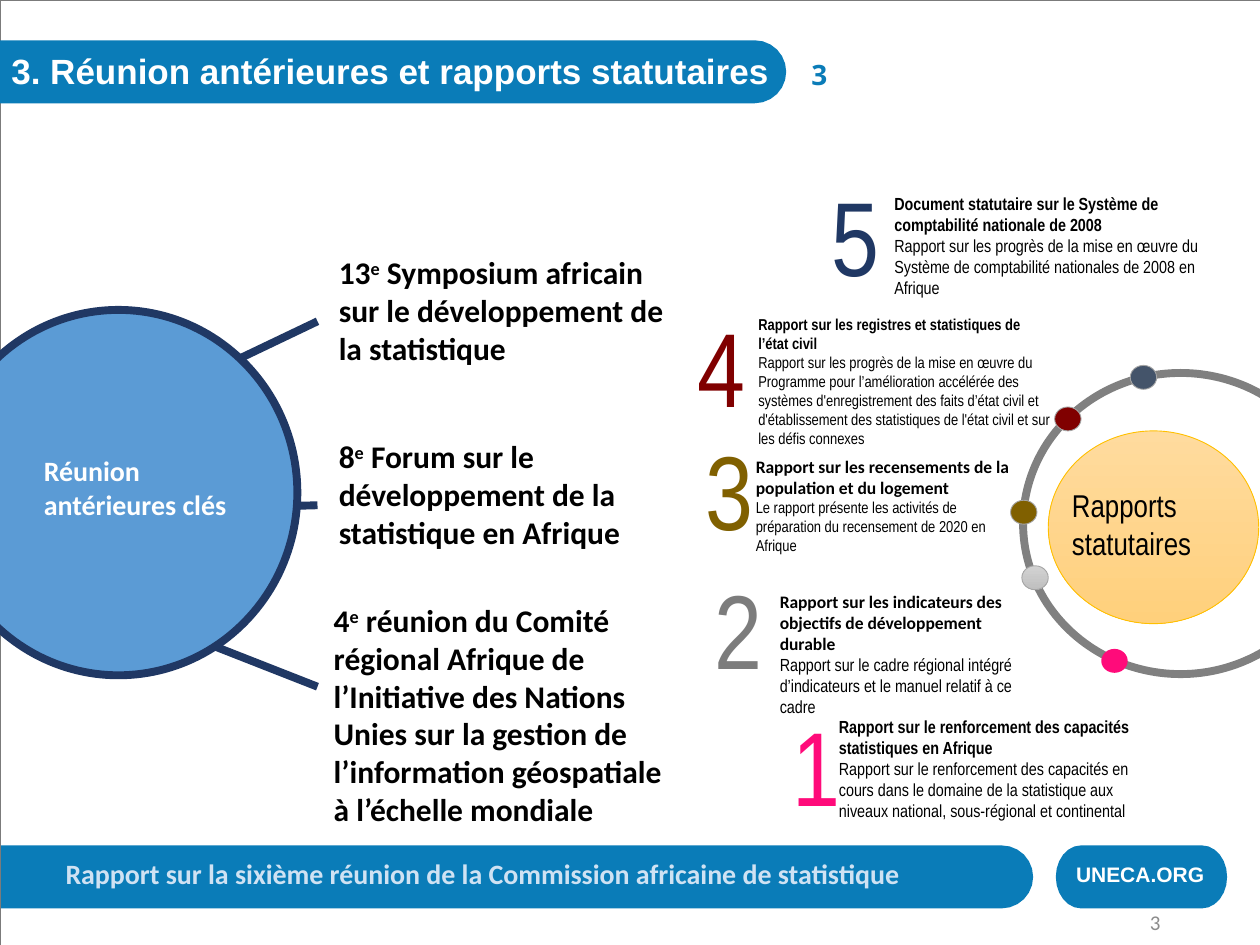
from math import cos, sin, radians
from lxml.etree import SubElement
from pptx import Presentation
from pptx.dml.color import RGBColor as Rgb
from pptx.enum.shapes import MSO_CONNECTOR as Link, MSO_SHAPE as Kind
from pptx.enum.text import MSO_ANCHOR as Anchor, MSO_AUTO_SIZE as Fit, PP_ALIGN as Align
from pptx.oxml.ns import qn
from pptx.util import Inches, Pt

BLUE, NAVY, WHITE, GREY = "0A7CB8", "203864", "FFFFFF", "A5A5A5"
NARROW = "Arial Narrow"

EVENTS = [
    (2.59, 1.96, 1.01, "13", " Symposium africain sur le développement de la statistique"),
    (2.59, 3.42, 1.01, "8", " Forum sur le développement de la statistique en Afrique"),
    (2.55, 4.72, 1.92, "4", " réunion du Comité régional Afrique de l’Initiative des Nations Unies "
     "sur la gestion de l’information géospatiale à l’échelle mondiale"),
]
SPOKES = [(1.39, 3.09, 2.52, 2.55), (1.5, 5.05, 2.52, 5.45), (1.45, 4.04, 2.52, 4.01)]
REPORTS = [
    ("5", NAVY, (6.5, 1.31, 0.49, 1.14), (7, 1.48, 2.74, 0.94), NARROW, 10, 10,
     "Document statutaire sur le Système de comptabilité nationale de 2008",
     "Rapport sur les progrès de la mise en œuvre du Système de comptabilité "
     "nationales de 2008 en Afrique"),
    ("4", "800000", (5.44, 2.35, 0.44, 1.14), (5.92, 2.45, 2.53, 1.16), NARROW, 9, 9,
     "Rapport sur les registres et statistiques de l’état civil",
     "Rapport sur les progrès de la mise en œuvre du Programme pour l’amélioration "
     "accélérée des systèmes d'enregistrement des faits d’état civil et d'établissement "
     "des statistiques de l'état civil et sur les défis connexes"),
    ("3", "806000", (5.5, 3.33, 0.41, 1.14), (5.9, 3.57, 2.22, 0.89), "Calibri", 10, 9,
     "Rapport sur les recensements de la population et du logement",
     "Le rapport présente les activités de préparation du recensement de 2020 en Afrique"),
    ("2", "7C7C7C", (5.57, 4.43, 0.43, 1.14), (6.09, 4.64, 2.19, 1.11), "Calibri", 10, 10,
     "Rapport sur les indicateurs des objectifs de développement durable",
     "Rapport sur le cadre régional intégré d’indicateurs et le manuel relatif à ce cadre"),
    ("1", "FF0B7A", (6.19, 5.52, 0.47, 1.14), (6.56, 5.63, 2.51, 0.94), NARROW, 10, 10,
     "Rapport sur le renforcement des capacités statistiques en Afrique",
     "Rapport sur le renforcement des capacités en cours dans le domaine de la statistique "
     "aux niveaux national, sous-régional et continental"),
]
DOTS = [
    (8.74, 5.15, "FF0B7A", None),
    (8.11, 4.49, ("D2D2D2", "C0C0C0"), GREY),
    (8.02, 3.97, "806000", GREY),
    (8.37, 3.23, "800000", GREY),
    (8.97, 2.9, "44546A", GREY),
]


def color(code):
    """Turn a hex string into a colour."""
    return Rgb.from_string(code)


def paint(shape, fill=None, line=None, width=0.5):
    """Set a solid, two-tone or empty fill, the outline, and no shadow."""
    shape.shadow.inherit = False
    if isinstance(fill, tuple):
        shape.fill.gradient()
        shape.fill.gradient_angle = 270
        for stop, code, place in zip(shape.fill.gradient_stops, fill, (0, 1)):
            stop.color.rgb = color(code)
            stop.position = place
    elif fill:
        shape.fill.solid()
        shape.fill.fore_color.rgb = color(fill)
    else:
        shape.fill.background()
    if line:
        shape.line.color.rgb = color(line)
        shape.line.width = Pt(width)
    else:
        shape.line.fill.background()


def trace(shapes, points, close=True, **look):
    """Draw an outline through points given in inches."""
    spots = [(Inches(x), Inches(y)) for x, y in points]
    pen = shapes.build_freeform(*spots[0])
    pen.add_line_segments(spots[1:], close=close)
    paint(pen.convert_to_shape(), **look)


def bar(shapes, left, top, right, bend=0.25, pill=False):
    """Draw a blue bar with a round right end, and a round left end for a pill."""
    half = 0.25
    mid = top + half

    def arc(x, start):
        """List the points of a half turn."""
        turns = [radians(start + step) for step in range(0, 181, 15)]
        return [(x + bend * cos(a), mid + half * sin(a)) for a in turns]

    end = arc(left + bend, 90) if pill else [(left, top + 2 * half), (left, top)]
    trace(shapes, arc(right - bend, -90) + end, fill=BLUE)


def oval(shapes, box, **look):
    """Draw an ellipse."""
    paint(shapes.add_shape(Kind.OVAL, *map(Inches, box)), **look)


def spoke(shapes, ends):
    """Draw a thick navy line."""
    line = shapes.add_connector(Link.STRAIGHT, *map(Inches, ends))
    line.line.color.rgb = color(NAVY)
    line.line.width = Pt(4.5)
    SubElement(line._element.spPr, qn("a:effectLst"))


def write(shapes, box, *paras, size=10, font="Calibri", ink="000000", bold=False,
          flush=False, align=None, anchor=None, grow=True):
    """Add a text box; each paragraph is a string or a list of (text, changes) runs."""
    frame = shapes.add_textbox(*map(Inches, box)).text_frame
    frame.word_wrap = True
    frame.auto_size = Fit.SHAPE_TO_FIT_TEXT if grow else Fit.NONE
    if flush:
        frame.margin_left = frame.margin_right = frame.margin_top = frame.margin_bottom = 0
    if anchor is not None:
        frame.vertical_anchor = anchor
    for place, runs in enumerate(paras):
        para = frame.add_paragraph() if place else frame.paragraphs[0]
        para.alignment = align
        for words, diff in ([(runs, {})] if isinstance(runs, str) else runs):
            run = para.add_run()
            run.text = words
            run.font.size = Pt(diff.get("size", size))
            run.font.name = diff.get("font", font)
            run.font.bold = diff.get("bold", bold)
            run.font.color.rgb = color(ink)
            if diff.get("high"):
                run._r.get_or_add_rPr().set("baseline", "30000")


def frame(shapes):
    """Draw the title, the footer and the page numbers."""
    bar(shapes, 0, 6.71, 8.2)
    write(shapes, (0.52, 6.8, 7.79, 0.28),
          "Rapport sur la sixième réunion de la Commission africaine de statistique",
          size=16, ink="CFE2F3", bold=True, flush=True)
    trace(shapes, [(0, 7.5), (0, 0), (10, 0)], close=False, line="7B7B7B", width=0.25)
    bar(shapes, 0, 0.32, 6.24)
    bar(shapes, 8.38, 6.71, 9.74, bend=0.2, pill=True)
    write(shapes, (8.54, 6.84, 1.2, 0.21), "UNECA.ORG",
          size=12, font="Arial", ink=WHITE, bold=True, flush=True)
    write(shapes, (0.09, 0.39, 7.06, 0.35), "3. Réunion antérieures et rapports statutaires",
          size=20, font="Arial", ink=WHITE, bold=True, flush=True)
    write(shapes, (6.44, 0.46, 0.62, 0.28), "3",
          size=16, font="Open Sans", ink=BLUE, bold=True, flush=True)
    write(shapes, (8.93, 7.24, 0.38, 0.16), "3", size=12, ink="8C8C8C",
          align=Align.RIGHT, anchor=Anchor.MIDDLE, grow=False)


def events(shapes):
    """Draw the hub of past meetings with its three spokes."""
    for ends in SPOKES:
        spoke(shapes, ends)
    oval(shapes, (-0.48, 2.46, 2.84, 2.9), fill="5B9BD5", line=NAVY, width=4.5)
    for left, top, high, rank, name in EVENTS:
        write(shapes, (left, top, 2.95, high), [(rank, {}), ("e", {"high": True}), (name, {})],
              size=18, bold=True)
    write(shapes, (0.25, 3.55, 1.96, 0.64), "Réunion antérieures clés",
          size=16, ink=WHITE, bold=True)


def reports(shapes):
    """Draw the numbered reports and the ring beside them."""
    for rank, ink, spot, box, font, size, small, head, body in REPORTS:
        write(shapes, spot, rank, size=60, font=NARROW, ink=ink)
        write(shapes, box, [(head, {"bold": True, "font": font, "size": size})], body,
              size=small, font=NARROW)
    oval(shapes, (8.12, 2.96, 2.5, 2.39), line="808080", width=4.5)
    for left, top, fill, line in DOTS:
        oval(shapes, (left, top, 0.21, 0.19), fill=fill, line=line)
    oval(shapes, (8.32, 3.42, 1.67, 1.53), fill=("FFDB9E", "FFD07C"), line="FFC000")
    write(shapes, (8.41, 3.78, 1.23, 0.69),
          [("Rapports", {}), (" ", {"size": 20}), ("statutaires", {})], size=18, font=NARROW)


def main():
    """Build and save the slide."""
    deck = Presentation()
    deck.slide_width, deck.slide_height = Inches(10), Inches(7.5)
    shapes = deck.slides.add_slide(deck.slide_layouts[6]).shapes
    frame(shapes)
    events(shapes)
    reports(shapes)
    deck.save("out.pptx")


if __name__ == "__main__":
    main()
